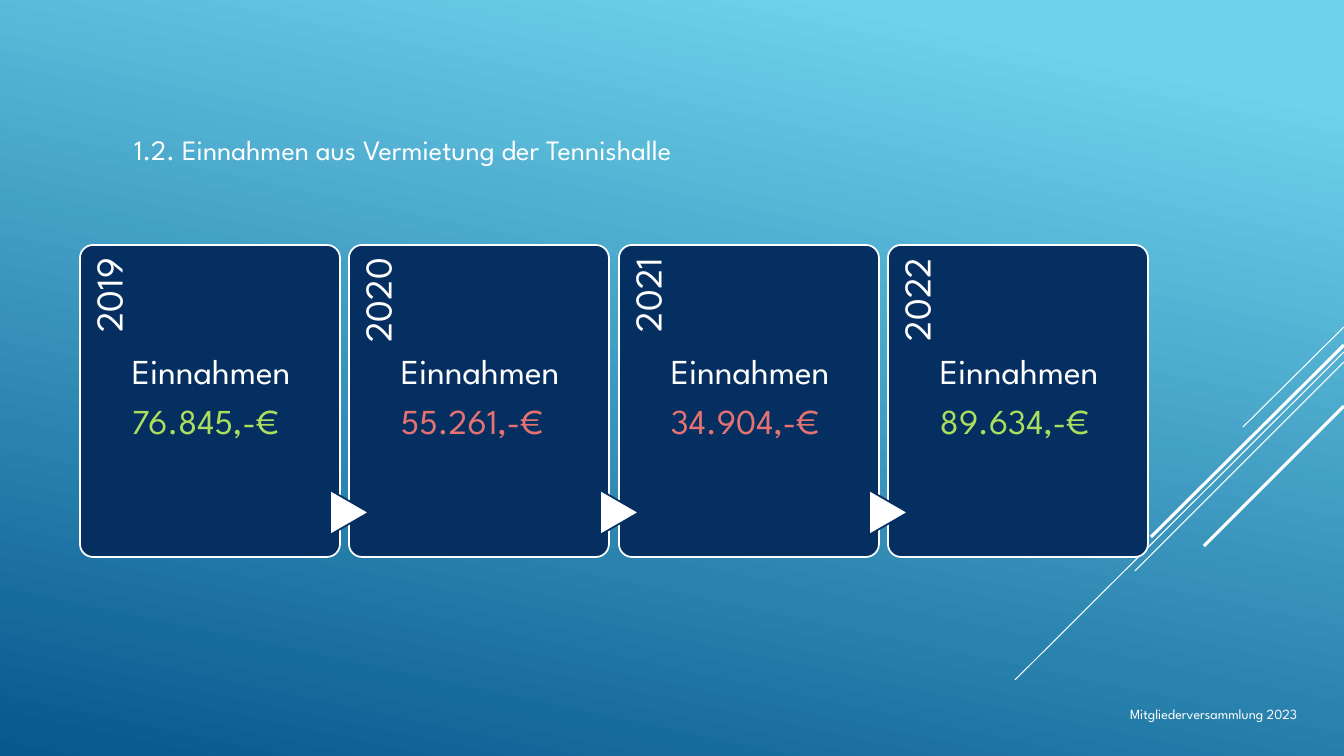
from lxml.etree import SubElement
from pptx import Presentation
from pptx.dml.color import RGBColor
from pptx.enum.shapes import MSO_CONNECTOR, MSO_SHAPE
from pptx.enum.text import MSO_ANCHOR, PP_ALIGN
from pptx.oxml.ns import qn
from pptx.util import Emu, Pt

WHITE = RGBColor(0xFF, 0xFF, 0xFF)
NAVY = RGBColor(0x05, 0x2F, 0x61)
GREEN = RGBColor(0xAA, 0xDF, 0x5E)
RED = RGBColor(0xE6, 0x72, 0x72)
SKY = RGBColor(0x6E, 0xD2, 0xEB)
DEEP = RGBColor(0x06, 0x58, 0x8E)
FONT = "League Spartan"
PX = 9144000 / 1008


def px(*sizes):
    """Turn pixel lengths into EMU."""
    return [Emu(round(size * PX)) for size in sizes]


def write(shape, lines, size, inset, align=PP_ALIGN.LEFT, pitch=1.0, after=0):
    """Fill a shape with (text, colour) lines; inset is left, top, right, bottom."""
    frame = shape.text_frame
    frame.word_wrap = True
    (frame.margin_left, frame.margin_top,
     frame.margin_right, frame.margin_bottom) = px(*inset)
    for i, (text, color) in enumerate(lines):
        para = frame.add_paragraph() if i else frame.paragraphs[0]
        para.alignment = align
        para.line_spacing = pitch
        para.space_before = Pt(0)
        para.space_after = Pt(after)
        run = para.add_run()
        run.text = text
        run.font.name = FONT
        run.font.size = Pt(size)
        run.font.color.rgb = color


deck = Presentation()
deck.slide_width, deck.slide_height = px(1344, 756)
slide = deck.slides.add_slide(deck.slide_layouts[5])
shapes = slide.shapes

# Background
back = slide.background.fill
back.gradient()
back.gradient_angle = 258
for stop, place, color in zip(back.gradient_stops, (0.1, 1), (SKY, DEEP)):
    stop.position = place
    stop.color.rgb = color

# Diagonal lines from the right edge
rays = [(327, 1243, 427, 0.75), (352, 1015, 680, 0.75), (362, 1135, 571, 0.75),
        (345, 1151, 537, 2.25), (406, 1204, 546, 2.25)]
for start, x, y, width in rays:
    ray = shapes.add_connector(MSO_CONNECTOR.STRAIGHT, *px(1344, start, x, y))
    ray.line.color.rgb = WHITE
    ray.line.width = Pt(width)
    SubElement(ray._element.spPr, qn("a:effectLst"))

# Title
title = shapes.title
title.left, title.top, title.width, title.height = px(76, 125, 1040, 48)
title.text_frame.vertical_anchor = MSO_ANCHOR.MIDDLE
write(title, [("1.2. Einnahmen aus Vermietung der Tennishalle", WHITE)],
      20, (58, 5, 10, 5))

# Year cards
years = [("2019", "76.845,-€", GREEN), ("2020", "55.261,-€", RED),
         ("2021", "34.904,-€", RED), ("2022", "89.634,-€", GREEN)]
for i, (year, amount, color) in enumerate(years):
    left = 80 + 539 * i // 2
    card = shapes.add_shape(MSO_SHAPE.ROUNDED_RECTANGLE, *px(left, 245, 260, 312))
    card.adjustments[0] = 0.05
    parts = [(card, NAVY, WHITE)]
    if i:
        arrow = shapes.add_shape(MSO_SHAPE.FLOWCHART_EXTRACT,
                                 *px(left - 22, 493, 45, 39))
        arrow.rotation = 90
        parts.append((arrow, WHITE, NAVY))
    for part, fill, edge in parts:
        part.shadow.inherit = False
        part.fill.solid()
        part.fill.fore_color.rgb = fill
        part.line.color.rgb = edge
        part.line.width = Pt(1.25)

    label = shapes.add_textbox(*px(left - 102, 347, 256, 52))
    label.rotation = 270
    write(label, [(year, WHITE)], 27, (0, 10, 13, 0), PP_ALIGN.RIGHT, 0.9)

    income = shapes.add_textbox(*px(left + 52, 345, 194, 212))
    write(income, [("Einnahmen", WHITE), (amount, color)],
          25, (0, 9, 0, 0), pitch=0.9, after=8.75)

# Footer
footer = shapes.add_textbox(*px(475, 701, 832, 40))
write(footer, [("Mitgliederversammlung 2023", WHITE)],
      10, (10, 5, 10, 5), PP_ALIGN.RIGHT)

deck.save("out.pptx")
